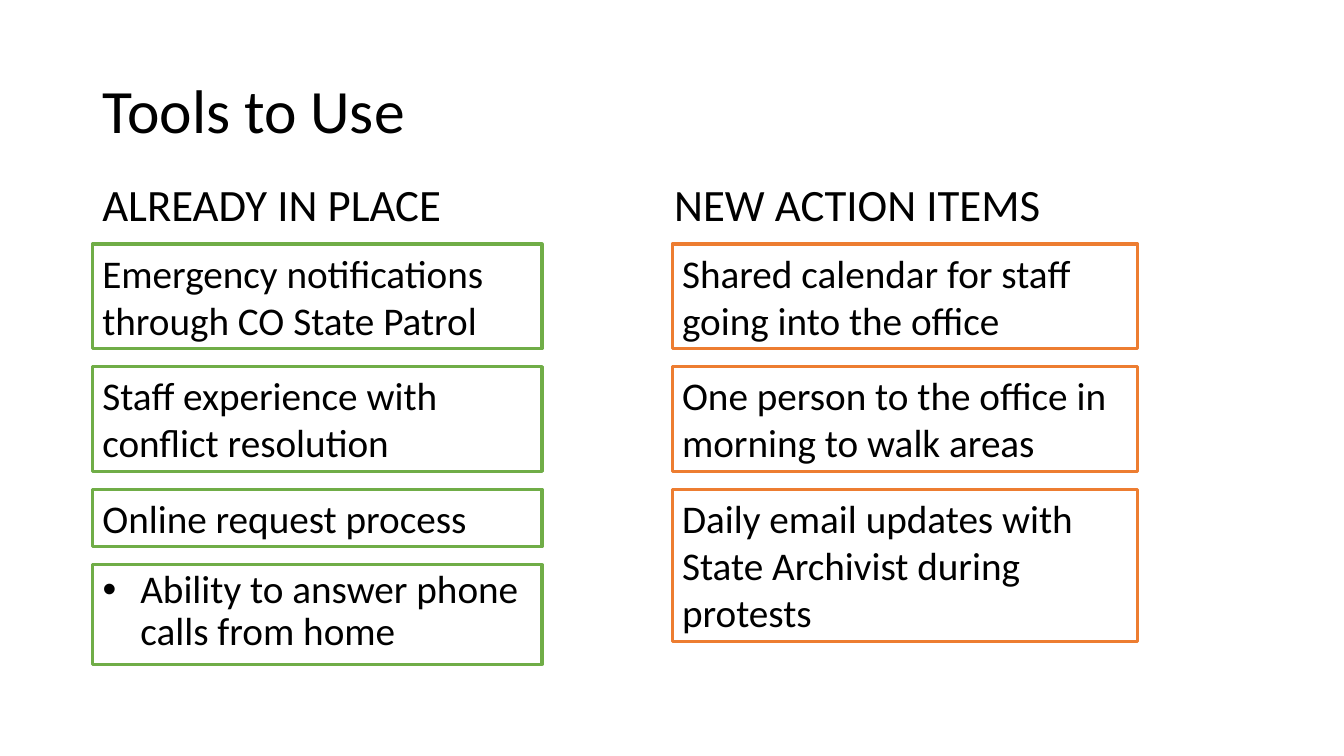
from lxml import etree
from pptx import Presentation
from pptx.dml.color import RGBColor
from pptx.enum.shapes import MSO_SHAPE
from pptx.enum.text import MSO_ANCHOR, MSO_AUTO_SIZE, PP_ALIGN
from pptx.oxml.ns import qn
from pptx.util import Cm, Pt

RECTANGLE = MSO_SHAPE.RECTANGLE
TOP, MIDDLE = MSO_ANCHOR.TOP, MSO_ANCHOR.MIDDLE
LEFT = PP_ALIGN.LEFT
FIXED = MSO_AUTO_SIZE.NONE

TITLE = "Tools to Use"
PHONE_CALLS = "Ability to answer phone calls from home"
COLUMNS = [
    {
        "heading": "ALREADY IN PLACE",
        "heading_left": 2.33,
        "left": 2.33,
        "width": 11.33,
        "outline": "70AD47",
        "tools": [
            ("Emergency notifications through CO State Patrol", 2.64),
            ("Staff experience with conflict resolution", 2.64),
            ("Online request process", 1.45),
            (PHONE_CALLS, 2.51),
        ],
    },
    {
        "heading": "NEW ACTION ITEMS",
        "heading_left": 16.74,
        "left": 16.94,
        "width": 11.73,
        "outline": "ED7D31",
        "tools": [
            ("Shared calendar for staff going into the office", 2.64),
            ("One person to the office in morning to walk areas", 2.64),
            ("Daily email updates with State Archivist during protests", 3.84),
        ],
    },
]
HEADING_TOP, HEADING_HEIGHT = 4.32, 1.63
TOOLS_TOP, TOOL_GAP = 6.15, 0.45


def color(value):
    return RGBColor.from_string(value)


def place(shape, left, top, width, height):
    shape.left, shape.top = Cm(left), Cm(top)
    shape.width, shape.height = Cm(width), Cm(height)


def write(shape, text, size, anchor=TOP, spacing=1.0):
    frame = shape.text_frame
    frame.text = text
    frame.word_wrap = True
    frame.auto_size = FIXED
    frame.vertical_anchor = anchor
    paragraph = frame.paragraphs[0]
    paragraph.alignment = LEFT
    paragraph.line_spacing = spacing
    paragraph.space_before = Pt(0)
    paragraph.font.name = "Calibri"
    paragraph.font.size = Pt(size)
    paragraph.font.color.rgb = color("000000")


def remove_bullet(paragraph):
    properties = paragraph._p.get_or_add_pPr()
    properties.set("marL", "0")
    properties.set("indent", "0")
    etree.SubElement(properties, qn("a:buNone"))


def outline(shape, line_color):
    shape.fill.solid()
    shape.fill.fore_color.rgb = color("FFFFFF")
    shape.line.color.rgb = color(line_color)
    shape.line.width = Pt(2.25)


def main():
    deck = Presentation()
    deck.slide_width, deck.slide_height = Cm(33.87), Cm(19.05)
    slide = deck.slides.add_slide(deck.slide_layouts[1])
    title, phone_calls = slide.placeholders

    place(title, 2.33, 1.02, 29.21, 3.68)
    write(title, TITLE, 44, MIDDLE, 0.9)
    remove_bullet(phone_calls.text_frame.paragraphs[0])

    for column in COLUMNS:
        left, width = column["left"], column["width"]
        heading = slide.shapes.add_textbox(0, 0, 0, 0)
        place(heading, column["heading_left"], HEADING_TOP, width, HEADING_HEIGHT)
        write(heading, column["heading"], 32)

        top = TOOLS_TOP
        for tool, height in column["tools"]:
            if tool == PHONE_CALLS:
                box, spacing = phone_calls, 0.9
            else:
                box, spacing = slide.shapes.add_shape(RECTANGLE, 0, 0, 0, 0), 1.0
                box.shadow.inherit = False
            place(box, left, top, width, height)
            outline(box, column["outline"])
            write(box, tool, 28, spacing=spacing)
            top += height + TOOL_GAP

    deck.save("out.pptx")


if __name__ == "__main__":
    main()
